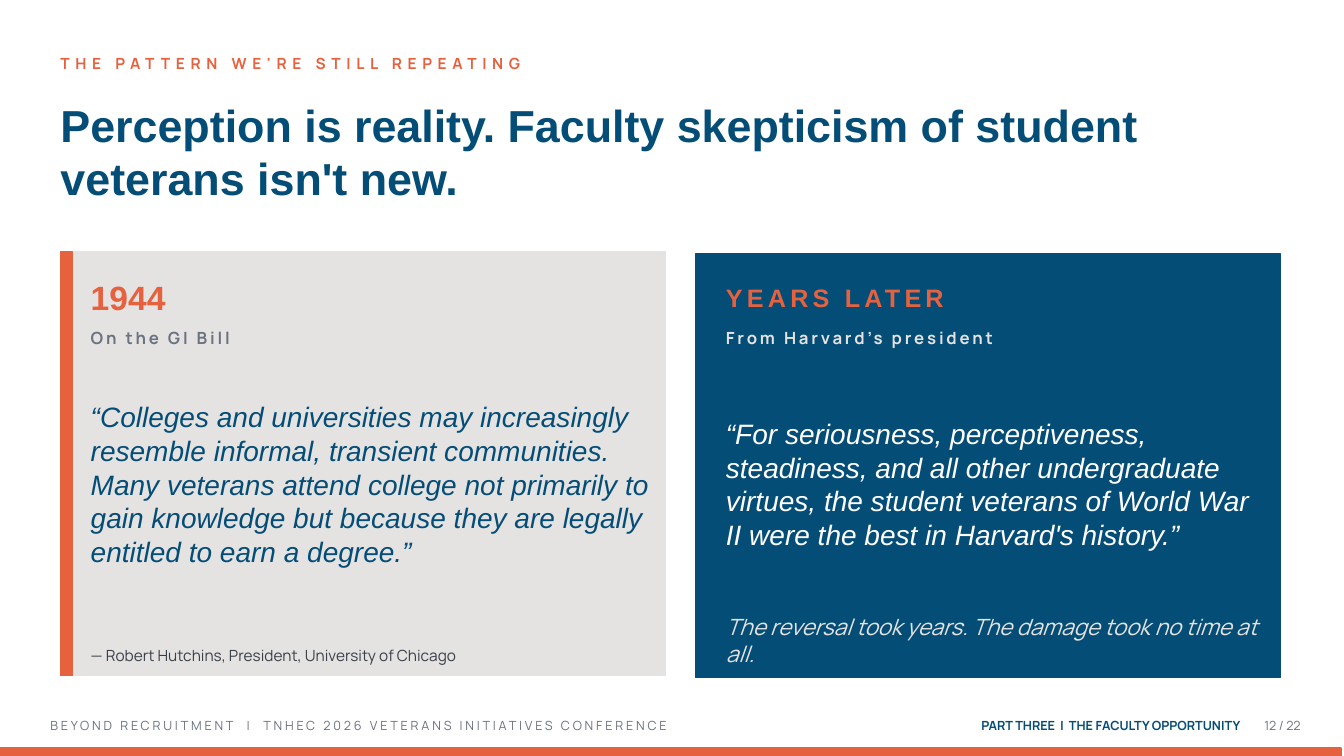
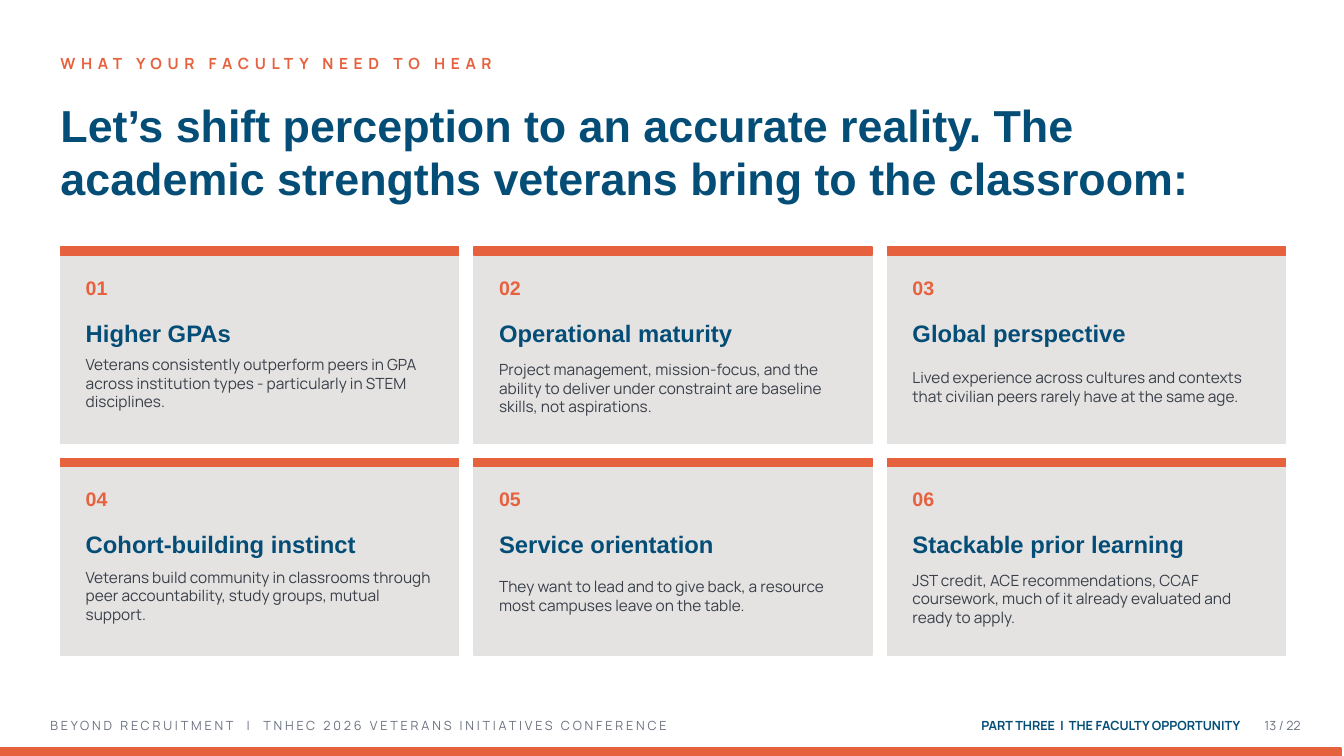
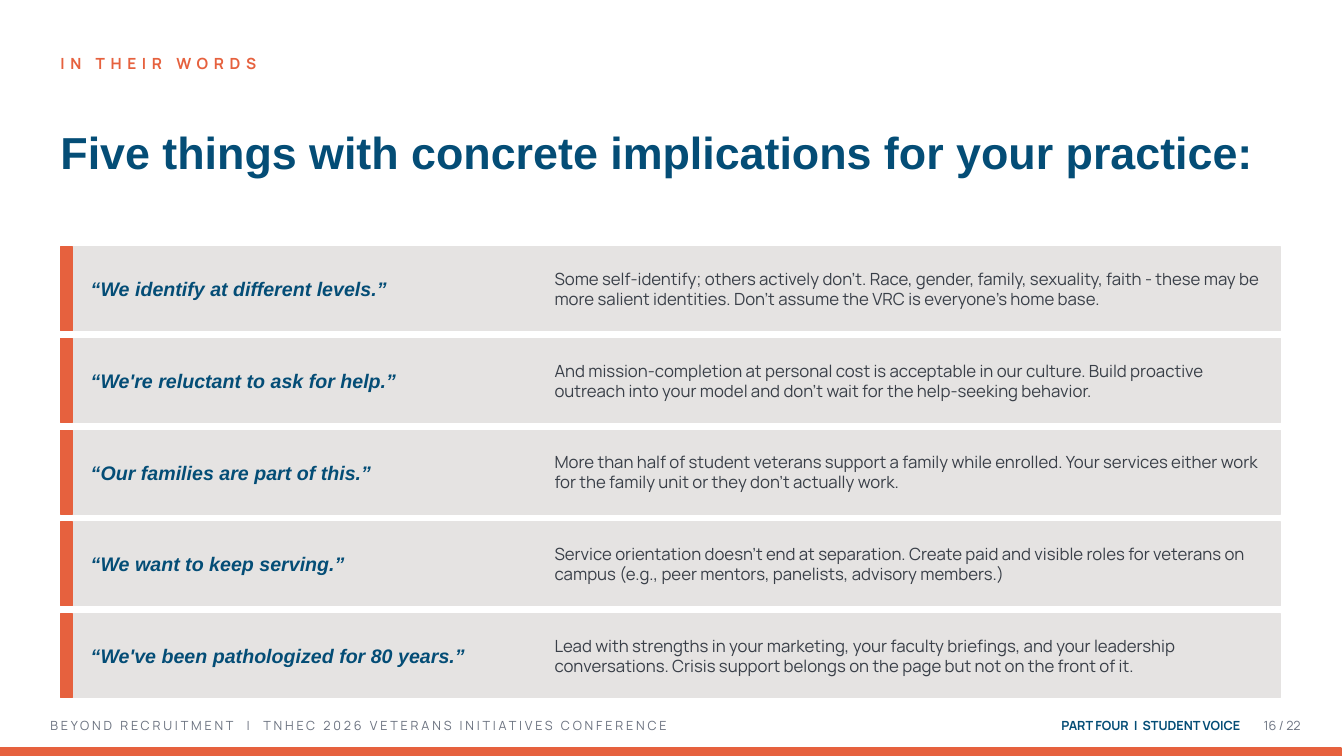
from pptx import Presentation
from pptx.dml.color import RGBColor
from pptx.enum.shapes import MSO_SHAPE
from pptx.enum.text import MSO_ANCHOR, PP_ALIGN
from pptx.util import Inches, Pt

ORANGE, NAVY, GRAY = "E6613E", "044D76", "E5E3E2"
SLATE, INK, WHITE = "6B7280", "393F48", "FFFFFF"
HEAD, BODY = "Arial", "Manrope"
LEFT = 0.6
BAR = 0.12
STRIP = 0.08
EVENT = "BEYOND RECRUITMENT  |  TNHEC 2026 VETERANS INITIATIVES CONFERENCE"
FACULTY_PART = "PART THREE  |  THE FACULTY OPPORTUNITY"
VOICE_PART = "PART FOUR  |  STUDENT VOICE"

STRENGTHS = [
    ("Higher GPAs", 0.95,
     "Veterans consistently outperform peers in GPA across institution types - "
     "particularly in STEM disciplines."),
    ("Operational maturity", 1,
     "Project management, mission-focus, and the ability to deliver under constraint "
     "are baseline skills, not aspirations."),
    ("Global perspective", 0.99,
     "Lived experience across cultures and contexts that civilian peers rarely have "
     "at the same age."),
    ("Cohort-building instinct", 0.96,
     "Veterans build community in classrooms through peer accountability, study "
     "groups, mutual support."),
    ("Service orientation", 0.96,
     "They want to lead and to give back, a resource most campuses leave on the table."),
    ("Stackable prior learning", 0.99,
     "JST credit, ACE recommendations, CCAF coursework, much of it already evaluated "
     "and ready to apply."),
]

VOICES = [
    ("“We identify at different levels.”",
     "Some self-identify; others actively don't. Race, gender, family, sexuality, faith - "
     "these may be more salient identities. Don't assume the VRC is everyone's home base."),
    ("“We're reluctant to ask for help.”",
     "And mission-completion at personal cost is acceptable in our culture. Build proactive "
     "outreach into your model and don't wait for the help-seeking behavior."),
    ("“Our families are part of this.”",
     "More than half of student veterans support a family while enrolled. Your services "
     "either work for the family unit or they don't actually work."),
    ("“We want to keep serving.”",
     "Service orientation doesn't end at separation. Create paid and visible roles for "
     "veterans on campus (e.g., peer mentors, panelists, advisory members.)"),
    ("“We've been pathologized for 80 years.”",
     "Lead with strengths in your marketing, your faculty briefings, and your leadership "
     "conversations. Crisis support belongs on the page but not on the front of it."),
]


def color(hex_code):
    """Turn a hex string into a colour."""
    return RGBColor.from_string(hex_code)


def rect(s, x, y, w, h, fill):
    """Draw a rectangle with an outline of its own colour."""
    sp = s.shapes.add_shape(MSO_SHAPE.RECTANGLE, Inches(x), Inches(y), Inches(w), Inches(h))
    sp.shadow.inherit = False
    sp.fill.solid()
    sp.fill.fore_color.rgb = color(fill)
    sp.line.color.rgb = color(fill)
    sp.line.width = Pt(1)


def text(s, x, y, w, h, words, size, ink, font=BODY, bold=False, italic=False,
         spacing=0, align=PP_ALIGN.LEFT):
    """Place one vertically centred paragraph in a box without margins."""
    tf = s.shapes.add_textbox(Inches(x), Inches(y), Inches(w), Inches(h)).text_frame
    tf.word_wrap = True
    tf.vertical_anchor = MSO_ANCHOR.MIDDLE
    tf.margin_left = tf.margin_right = tf.margin_top = tf.margin_bottom = 0
    p = tf.paragraphs[0]
    p.alignment = align
    r = p.add_run()
    r.text = words
    p.font.name, p.font.size = font, Pt(size)
    p.font.bold, p.font.italic = bold, italic
    p.font.color.rgb = color(ink)
    if spacing:
        r._r.get_or_add_rPr().set("spc", str(spacing * 100))


def new_slide(prs, kicker, title, part, number):
    """Add a blank slide with heading and footer."""
    s = prs.slides.add_slide(prs.slide_layouts[6])
    text(s, LEFT, 0.45, 12, 0.35, kicker, 11, ORANGE, bold=True, spacing=4)
    text(s, LEFT, 0.8, 12, 1.4, title, 32, NAVY, HEAD, bold=True)
    rect(s, 0, 7.42, 13.3, STRIP, ORANGE)
    text(s, 0.5, 7.05, 8, 0.3, EVENT, 9, SLATE, spacing=2)
    text(s, 8.8, 7.05, 3.5, 0.3, part, 9, NAVY, bold=True, align=PP_ALIGN.RIGHT)
    text(s, 12.4, 7.05, 0.5, 0.3, f"{number} / 22", 9, SLATE, align=PP_ALIGN.RIGHT)
    return s


def barred_panel(s, x, y, w, h):
    """Draw a gray panel with an orange bar on its left edge."""
    rect(s, x, y, w, h, GRAY)
    rect(s, x, y, BAR, h, ORANGE)


def quotation(s, x, y, w, era, era_size, era_spacing, source, source_ink, quote, quote_ink):
    """Stack era, source and quote in a column."""
    text(s, x, y, w, 0.5, era, era_size, ORANGE, HEAD, bold=True, spacing=era_spacing)
    text(s, x, y + 0.45, w, 0.4, source, 12, source_ink, bold=True, spacing=2)
    text(s, x, y + 1, w, 2.2, quote, 20, quote_ink, HEAD, italic=True)


def strength_card(s, x, y, w, h, number, name, body_drop, body):
    """Draw a numbered card with an orange top strip."""
    inset = 0.25
    inner = w - 2 * inset
    rect(s, x, y, w, h, GRAY)
    rect(s, x, y, w, STRIP, ORANGE)
    text(s, x + inset, y + 0.2, 1, 0.4, f"{number:02d}", 14, ORANGE, HEAD, bold=True)
    text(s, x + inset, y + 0.6, inner, 0.5, name, 17, NAVY, HEAD, bold=True)
    text(s, x + inset, y + body_drop, inner, 0.8, body, 11, INK)


def voice_row(s, x, y, w, h, quote, advice):
    """Draw a row with a quote on the left and advice on the right."""
    pad = 0.1
    barred_panel(s, x, y, w, h)
    text(s, x + 0.3, y + pad, 4.5, h - 2 * pad, quote, 14, NAVY, HEAD, bold=True, italic=True)
    text(s, x + 4.9, y + pad, 7, h - 2 * pad, advice, 12, INK)


def pattern_slide(prs):
    """Build the slide that sets two quotations side by side."""
    s = new_slide(prs, "THE PATTERN WE'RE STILL REPEATING",
                  "Perception is reality. Faculty skepticism of student veterans isn't new.",
                  FACULTY_PART, 12)
    barred_panel(s, LEFT, 2.5, 6, 4.2)
    quotation(s, 0.9, 2.7, 5.6, "1944", 24, 0, "On the GI Bill", SLATE,
              "“Colleges and universities may increasingly resemble informal, transient "
              "communities. Many veterans attend college not primarily to gain knowledge "
              "but because they are legally entitled to earn a degree.”", NAVY)
    text(s, 0.9, 6.3, 5.6, 0.4, "— Robert Hutchins, President, University of Chicago", 11, INK)
    rect(s, 6.9, 2.52, 5.8, 4.2, NAVY)
    quotation(s, 7.2, 2.7, 5.3, "YEARS LATER", 18, 3, "From Harvard's president", GRAY,
              "“For seriousness, perceptiveness, steadiness, and all other undergraduate "
              "virtues, the student veterans of World War II were the best in Harvard's "
              "history.”", WHITE)
    text(s, 7.2, 6.15, 5.3, 0.4, "The reversal took years. The damage took no time at all.",
         16, GRAY, italic=True)


def strengths_slide(prs):
    """Build the slide with a grid of six strengths."""
    s = new_slide(prs, "WHAT YOUR FACULTY NEED TO HEAR",
                  "Let’s shift perception to an accurate reality. The academic strengths "
                  "veterans bring to the classroom:", FACULTY_PART, 13)
    w, h, gap = 3.95, 1.95, 0.15
    for i, strength in enumerate(STRENGTHS):
        row, col = divmod(i, 3)
        strength_card(s, LEFT + col * (w + gap), 2.45 + row * (h + gap), w, h, i + 1, *strength)


def voices_slide(prs):
    """Build the slide with five quoted rows."""
    s = new_slide(prs, "IN THEIR WORDS",
                  "Five things with concrete implications for your practice:", VOICE_PART, 16)
    h, gap = 0.83, 0.08
    for i, voice in enumerate(VOICES):
        voice_row(s, LEFT, 2.45 + i * (h + gap), 12.1, h, *voice)


def main():
    """Build and save the presentation."""
    prs = Presentation()
    prs.slide_width, prs.slide_height = Inches(13.33), Inches(7.5)
    pattern_slide(prs)
    strengths_slide(prs)
    voices_slide(prs)
    prs.save("out.pptx")


if __name__ == "__main__":
    main()
